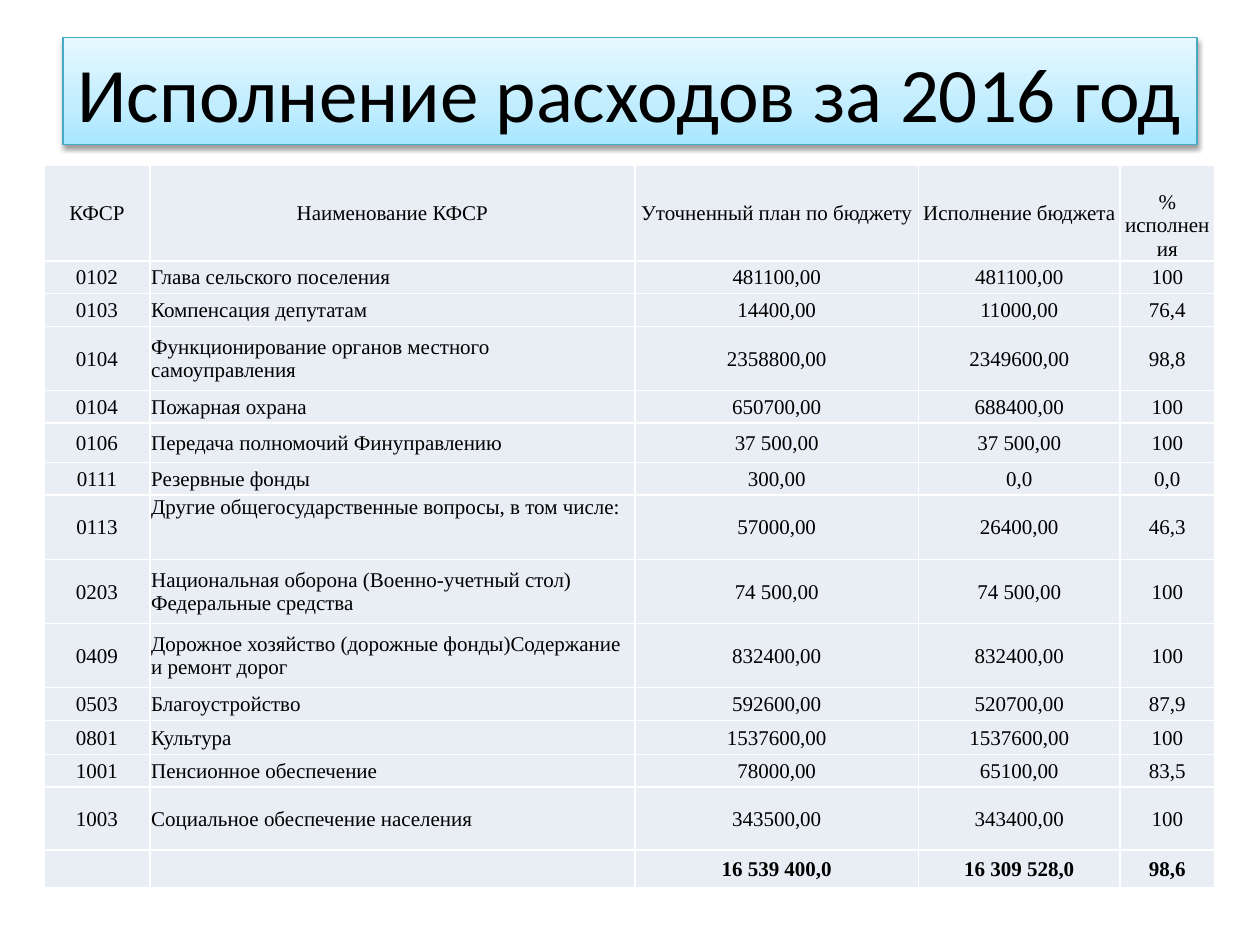
from copy import deepcopy
from typing import NamedTuple

from lxml import etree
from pptx import Presentation
from pptx.dml.color import RGBColor
from pptx.enum.text import MSO_ANCHOR, PP_ALIGN
from pptx.oxml.ns import qn
from pptx.util import Inches, Pt

LEFT, CENTER = PP_ALIGN.LEFT, PP_ALIGN.CENTER
TOP, MIDDLE, BOTTOM = MSO_ANCHOR.TOP, MSO_ANCHOR.MIDDLE, MSO_ANCHOR.BOTTOM

BLACK = RGBColor(0x00, 0x00, 0x00)
WHITE = RGBColor(0xFF, 0xFF, 0xFF)
CELL_FILL = RGBColor(0xE9, 0xED, 0xF4)
TITLE_BORDER = RGBColor(0x46, 0xAA, 0xC5)
TITLE_STOPS = (
    (0, RGBColor(0xA7, 0xE6, 0xFF)),
    (0.35, RGBColor(0xC1, 0xED, 0xFF)),
    (1, RGBColor(0xE7, 0xF8, 0xFF)),
)

SLIDE_WIDTH, SLIDE_HEIGHT = Inches(10), Inches(7.5)
COLUMN_WIDTHS = (0.84, 3.85, 2.25, 1.6, 0.75)
NAME_COLUMN = 1
HEADERS = ("КФСР", "Наименование КФСР", "Уточненный план по бюджету",
           "Исполнение бюджета", "% исполнения")
HEADER_HEIGHT, SINGLE, DOUBLE = 0.76, 0.26, 0.51


class Expense(NamedTuple):
    code: str
    name: str
    plan: str
    actual: str
    percent: str
    height: float = SINGLE
    name_anchor: MSO_ANCHOR = MIDDLE


EXPENSES = (
    Expense("0102", "Глава сельского поселения", "481100,00", "481100,00", "100"),
    Expense("0103", "Компенсация депутатам", "14400,00", "11000,00", "76,4"),
    Expense("0104", "Функционирование органов местного самоуправления",
            "2358800,00", "2349600,00", "98,8", DOUBLE),
    Expense("0104", "Пожарная охрана", "650700,00", "688400,00", "100"),
    Expense("0106", "Передача полномочий Финуправлению",
            "37 500,00", "37 500,00", "100", 0.31),
    Expense("0111", "Резервные фонды", "300,00", "0,0", "0,0"),
    Expense("0113", "Другие общегосударственные вопросы, в том числе:",
            "57000,00", "26400,00", "46,3", DOUBLE, TOP),
    Expense("0203", "Национальная оборона (Военно-учетный стол) Федеральные средства",
            "74 500,00", "74 500,00", "100", DOUBLE),
    Expense("0409", "Дорожное хозяйство (дорожные фонды)Содержание и ремонт дорог",
            "832400,00", "832400,00", "100", DOUBLE),
    Expense("0503", "Благоустройство", "592600,00", "520700,00", "87,9"),
    Expense("0801", "Культура", "1537600,00", "1537600,00", "100", 0.27),
    Expense("1001", "Пенсионное обеспечение", "78000,00", "65100,00", "83,5"),
    Expense("1003", "Социальное обеспечение населения",
            "343500,00", "343400,00", "100", 0.5),
)
TOTAL = Expense("", "", "16 539 400,0", "16 309 528,0", "98,6", 0.3)


def add_text(paragraph, text: str, font_name: str, size: float, bold: bool = False) -> None:
    run = paragraph.add_run()
    run.text = text
    run.font.name = font_name
    run.font.size = Pt(size)
    run.font.bold = bold
    run.font.color.rgb = BLACK


def fill_gradient(shape) -> None:
    """Fill from the bottom edge upwards with the title's three stops."""
    shape.fill.gradient()
    shape.fill.gradient_angle = 90
    stop_list = shape.element.spPr.find(qn("a:gradFill")).find(qn("a:gsLst"))
    stop_list.append(deepcopy(stop_list[-1]))
    for stop, (position, color) in zip(shape.fill.gradient_stops, TITLE_STOPS):
        stop.position = position
        stop.color.rgb = color


def add_shadow(shape) -> None:
    shape.shadow.inherit = False
    effects = shape.element.spPr.find(qn("a:effectLst"))
    shadow = etree.SubElement(effects, qn("a:outerShdw"), blurRad=str(Pt(3.1)),
                              dist=str(Pt(1.6)), dir="5400000", rotWithShape="0")
    color = etree.SubElement(shadow, qn("a:srgbClr"), val=str(BLACK))
    etree.SubElement(color, qn("a:alpha"), val="38000")


def format_title(title) -> None:
    title.left, title.top = int(SLIDE_WIDTH * 0.05), int(SLIDE_HEIGHT * 0.04)
    title.width, title.height = int(SLIDE_WIDTH * 0.9), Inches(0.85)
    fill_gradient(title)
    title.line.color.rgb = TITLE_BORDER
    title.line.width = Pt(0.75)
    add_shadow(title)
    frame = title.text_frame
    frame.word_wrap = True
    frame.vertical_anchor = MIDDLE
    frame.paragraphs[0].alignment = CENTER
    add_text(frame.paragraphs[0], "Исполнение расходов за 2016 год", "Calibri", 44)


def add_borders(cell) -> None:
    properties = cell._tc.get_or_add_tcPr()
    for side in ("lnL", "lnR", "lnT", "lnB"):
        line = etree.SubElement(properties, qn(f"a:{side}"), w=str(Pt(1)))
        solid = etree.SubElement(line, qn("a:solidFill"))
        etree.SubElement(solid, qn("a:srgbClr"), val=str(WHITE))


def format_cell(cell, text: str, align: PP_ALIGN, anchor: MSO_ANCHOR, bold: bool) -> None:
    add_borders(cell)
    cell.fill.solid()
    cell.fill.fore_color.rgb = CELL_FILL
    cell.margin_left = cell.margin_right = cell.margin_top = Inches(0.01)
    cell.margin_bottom = 0
    cell.vertical_anchor = anchor
    paragraph = cell.text_frame.paragraphs[0]
    paragraph.alignment = align
    if text:
        add_text(paragraph, text, "Times New Roman", 12, bold)
    else:
        etree.SubElement(paragraph._p, qn("a:endParaRPr"), sz="1200")


def add_expense_table(slide) -> None:
    heights = [HEADER_HEIGHT, *(row.height for row in (*EXPENSES, TOTAL))]
    table = slide.shapes.add_table(
        len(heights), len(COLUMN_WIDTHS), Inches(0.35), Inches(1.31),
        Inches(sum(COLUMN_WIDTHS)), Inches(sum(heights))).table
    table.first_row = table.horz_banding = False
    for column, width in zip(table.columns, COLUMN_WIDTHS):
        column.width = Inches(width)
    for row, height in zip(table.rows, heights):
        row.height = Inches(height)

    for column, header in enumerate(HEADERS):
        anchor = BOTTOM if column == len(HEADERS) - 1 else MIDDLE
        format_cell(table.cell(0, column), header, CENTER, anchor, False)
    for row, expense in enumerate((*EXPENSES, TOTAL), start=1):
        for column, text in enumerate(expense[:len(HEADERS)]):
            is_name = column == NAME_COLUMN
            format_cell(table.cell(row, column), text,
                        LEFT if is_name else CENTER,
                        expense.name_anchor if is_name else MIDDLE,
                        expense is TOTAL)


def main() -> None:
    presentation = Presentation()
    presentation.slide_width, presentation.slide_height = SLIDE_WIDTH, SLIDE_HEIGHT
    title_only = presentation.slide_layouts[5]
    slide = presentation.slides.add_slide(title_only)
    format_title(slide.shapes.title)
    add_expense_table(slide)
    presentation.save("out.pptx")


if __name__ == "__main__":
    main()
